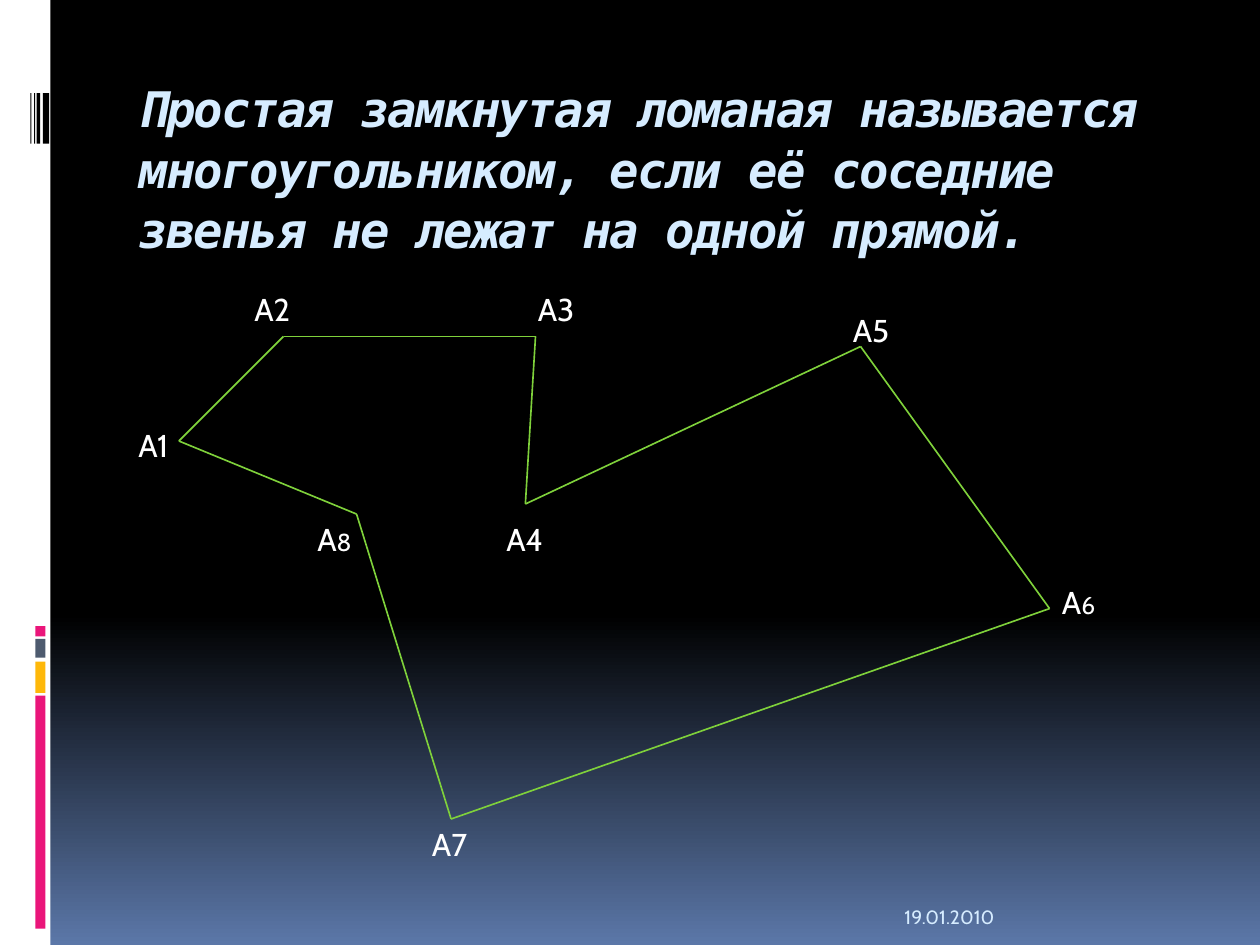
from itertools import pairwise

from pptx import Presentation
from pptx.dml.color import RGBColor
from pptx.enum.shapes import MSO_CONNECTOR, MSO_SHAPE
from pptx.enum.text import MSO_ANCHOR, MSO_AUTO_SIZE
from pptx.oxml.ns import qn
from pptx.util import Inches, Pt
from lxml.etree import SubElement

COLORS = {
    "black": "000000", "white": "FFFFFF", "sky": "5B77A8", "pale": "D6ECFF",
    "pink": "EA157A", "amber": "FEB80A", "slate": "4E5B6F", "green": "7FD13B",
}
TITLE = ("Простая замкнутая ломаная называется многоугольником, "
         "если её соседние звенья не лежат на одной прямой.")
DATE = "19.01.2010"

# (left, top, width, height, color)
SIDE_BARS = [
    (0, 0, 0.4, 7.5, "white"),
    (0.28, 5.52, 0.08, 1.85, "pink"),
    (0.28, 5.25, 0.08, 0.25, "amber"),
    (0.28, 5.07, 0.08, 0.15, "slate"),
    (0.28, 4.97, 0.08, 0.08, "pink"),
]
# (left, width) of the upright stripes near the top
STRIPES = [(0.34, 0.05), (0.29, 0.03), (0.27, 0.01), (0.24, 0.01)]
SIDE_BARS += [(left, 0.74, width, 0.4, "black") for left, width in STRIPES]

# (vertex, label position, label width, digit, digit size)
VERTICES = [
    ((1.42, 3.5), (1, 3.33), 0.5, "1", 18),
    ((2.25, 2.67), (1.92, 2.25), 0.58, "2", 18),
    ((4.25, 2.67), (4.17, 2.25), 0.58, "3", 18),
    ((4.17, 4), (3.92, 4.08), 0.5, "4", 18),
    ((6.83, 2.75), (6.67, 2.42), 0.5, "5", 18),
    ((8.33, 4.83), (8.33, 4.58), 0.58, "6", 14),
    ((3.58, 6.5), (3.33, 6.5), 0.58, "7", 18),
    ((2.83, 4.08), (2.42, 4.08), 0.58, "8", 14),
]


def rgb(name):
    return RGBColor.from_string(COLORS[name])


def paint_background(page):
    fill = page.background.fill
    fill.gradient()
    fill.gradient_angle = 270
    for stop, position, color in zip(fill.gradient_stops, (0.65, 1), ("black", "sky")):
        stop.position = position
        stop.color.rgb = rgb(color)


def add_bar(page, left, top, width, height, color):
    bar = page.shapes.add_shape(MSO_SHAPE.RECTANGLE, *map(Inches, (left, top, width, height)))
    bar.shadow.inherit = False
    bar.fill.solid()
    bar.fill.fore_color.rgb = rgb(color)
    bar.line.fill.background()


def add_side(page, start, end):
    side = page.shapes.add_connector(MSO_CONNECTOR.STRAIGHT, *map(Inches, start + end))
    side.line.color.rgb = rgb("green")
    side.line.width = Pt(0.94)
    SubElement(side.element.spPr, qn("a:effectLst"))


def add_text(page, place, spans, font="Cabin", color="white", bold=False, italic=False,
             spacing=None, line_spacing=None, anchor=MSO_ANCHOR.TOP, grow=False):
    """Add a one-paragraph box; spans are (text, size) pairs."""
    box = page.shapes.add_textbox(*map(Inches, place))
    frame = box.text_frame
    frame.word_wrap = True
    frame.vertical_anchor = anchor
    if grow:
        frame.auto_size = MSO_AUTO_SIZE.SHAPE_TO_FIT_TEXT
    para = frame.paragraphs[0]
    para.line_spacing = line_spacing
    for text, size in spans:
        span = para.add_run()
        span.text = text
        span.font.name = font
        span.font.size = Pt(size)
        span.font.bold = bold
        span.font.italic = italic
        span.font.color.rgb = rgb(color)
        if spacing is not None:
            span.font._element.set("spc", str(spacing * 100))


def main():
    deck = Presentation()
    deck.slide_width, deck.slide_height = Inches(10), Inches(7.5)
    page = deck.slides.add_slide(deck.slide_layouts[6])
    paint_background(page)
    for bar in SIDE_BARS:
        add_bar(page, *bar)

    add_text(page, (1, 0.56, 8.5, 1), [(TITLE, 28)], font="DejaVu Sans Mono",
             color="pale", bold=True, italic=True, spacing=-1, line_spacing=1.03)
    add_text(page, (7.08, 7.02, 2.33, 0.4), [(DATE, 11)], color="pale",
             anchor=MSO_ANCHOR.BOTTOM)

    points = [vertex[0] for vertex in VERTICES]
    for start, end in pairwise(points + points[:1]):
        add_side(page, start, end)
    for _, corner, width, digit, size in VERTICES:
        spans = [("A" + digit, 18)] if size == 18 else [("A", 18), (digit, size)]
        add_text(page, (*corner, width, 0.4), spans, grow=True)

    deck.save("out.pptx")


if __name__ == "__main__":
    main()
